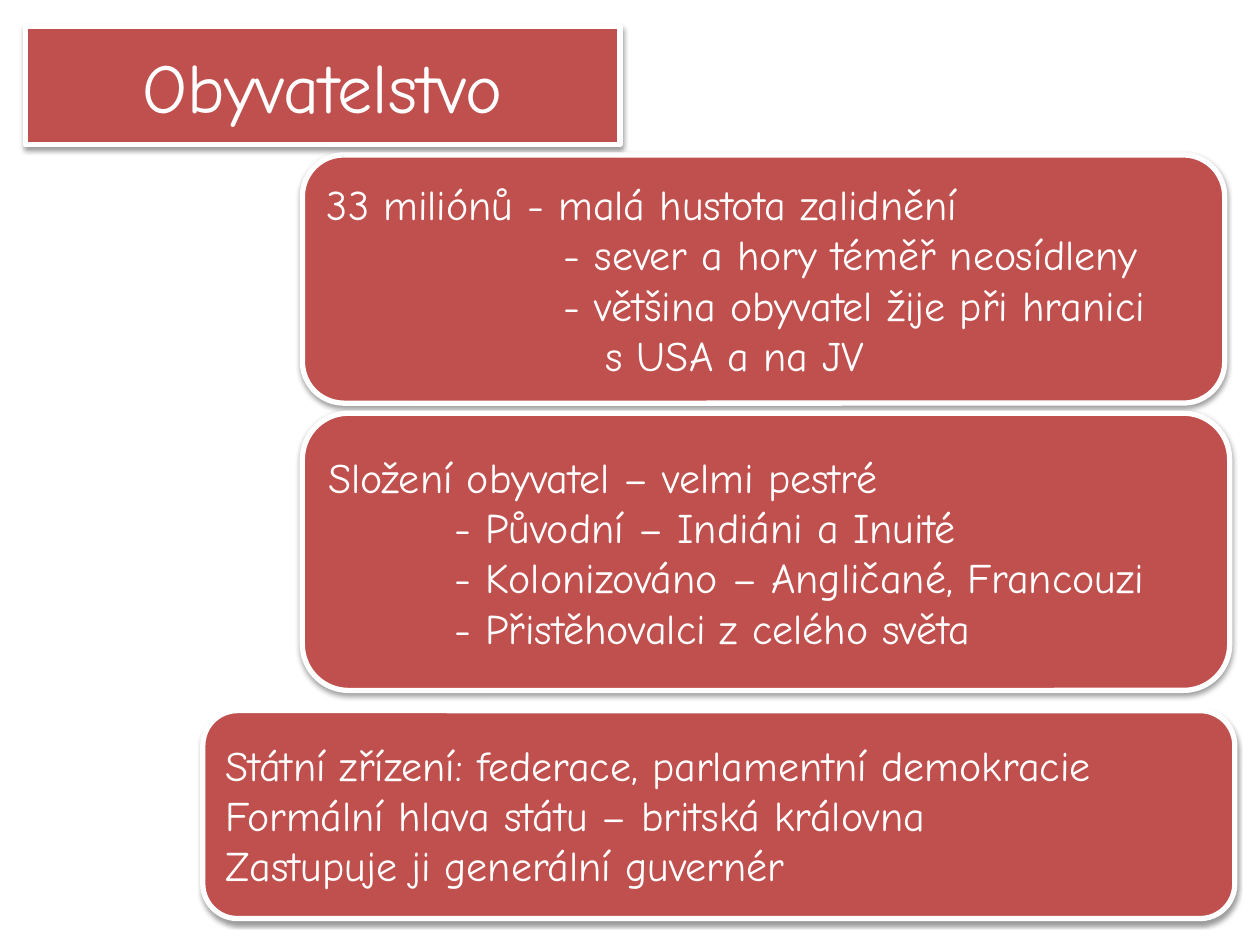
from dataclasses import dataclass

from lxml import etree
from pptx import Presentation
from pptx.dml.color import RGBColor
from pptx.enum.shapes import MSO_SHAPE
from pptx.enum.text import MSO_ANCHOR, MSO_AUTO_SIZE, PP_ALIGN
from pptx.oxml.ns import qn
from pptx.util import Inches, Pt

ROUNDED = MSO_SHAPE.ROUNDED_RECTANGLE
MIDDLE = MSO_ANCHOR.MIDDLE
NO_FIT = MSO_AUTO_SIZE.NONE
LEFT, CENTER = PP_ALIGN.LEFT, PP_ALIGN.CENTER
TITLE_ONLY = 5


@dataclass(frozen=True)
class Theme:
    font: str = "Comic Neue"
    panel: RGBColor = RGBColor(0xC0, 0x50, 0x4D)
    light: RGBColor = RGBColor(0xFF, 0xFF, 0xFF)
    shadow: str = "000000"
    title_size: Pt = Pt(40)
    body_size: Pt = Pt(24)
    border: Pt = Pt(3)


class SlideBuilder:
    """Draws rounded red panels on the current slide."""

    def __init__(self, slide, theme):
        self.slide = slide
        self.theme = theme

    def title(self, text, left, top, width, height):
        sp = self.slide.shapes.title
        sp.left, sp.top = Inches(left), Inches(top)
        sp.width, sp.height = Inches(width), Inches(height)
        geom = etree.Element(qn("a:prstGeom"), prst="roundRect")
        etree.SubElement(geom, qn("a:avLst"))
        sp._element.spPr.find(qn("a:xfrm")).addnext(geom)
        self.style(sp)
        self.text(sp, [(text, 0)], self.theme.title_size, CENTER)

    def panel(self, lines, left, top, width, height):
        sp = self.slide.shapes.add_shape(
            ROUNDED, Inches(left), Inches(top), Inches(width), Inches(height))
        self.style(sp)
        self.text(sp, lines, self.theme.body_size, LEFT)

    def style(self, sp):
        sp.fill.solid()
        sp.fill.fore_color.rgb = self.theme.panel
        sp.line.color.rgb = self.theme.light
        sp.line.width = self.theme.border
        sp.shadow.inherit = False
        effects = sp._element.spPr.find(qn("a:effectLst"))
        shadow = etree.SubElement(
            effects, qn("a:outerShdw"), blurRad="40000", dist="20000",
            dir="5400000", rotWithShape="0")
        color = etree.SubElement(shadow, qn("a:srgbClr"), val=self.theme.shadow)
        etree.SubElement(color, qn("a:alpha"), val="38000")

    def text(self, sp, lines, size, align):
        tf = sp.text_frame
        tf.word_wrap = True
        tf.auto_size = NO_FIT
        tf.vertical_anchor = MIDDLE
        for i, (line, indent) in enumerate(lines):
            p = tf.paragraphs[0] if i == 0 else tf.add_paragraph()
            p.alignment = align
            if indent:
                p._p.get_or_add_pPr().set("marL", str(Inches(indent)))
            r = p.add_run()
            r.text = line
            r.font.name = self.theme.font
            r.font.size = size
            r.font.color.rgb = self.theme.light


def main():
    prs = Presentation()
    prs.slide_width, prs.slide_height = Inches(10), Inches(7.5)
    s = prs.slides.add_slide(prs.slide_layouts[TITLE_ONLY])
    builder = SlideBuilder(s, Theme())

    builder.title("Obyvatelstvo", 0.2, 0.21, 4.72, 0.94)
    builder.panel([
        ("33 miliónů - malá hustota zalidnění", 0),
        ("- sever a hory téměř neosídleny", 1.88),
        ("- většina obyvatel žije při hranici", 1.88),
        ("s USA a na JV", 2.21),
    ], 2.4, 1.23, 7.32, 1.97)
    builder.panel([
        ("Složení obyvatel – velmi pestré", 0),
        ("- Původní – Indiáni a Inuité", 1),
        ("- Kolonizováno – Angličané, Francouzi", 1),
        ("- Přistěhovalci z celého světa", 1),
    ], 2.4, 3.28, 7.36, 2.2)
    builder.panel([
        ("Státní zřízení: federace, parlamentní demokracie", 0),
        ("Formální hlava státu – britská královna", 0),
        ("Zastupuje ji generální guvernér", 0),
    ], 1.61, 5.64, 8.19, 1.65)

    prs.save("out.pptx")


if __name__ == "__main__":
    main()
